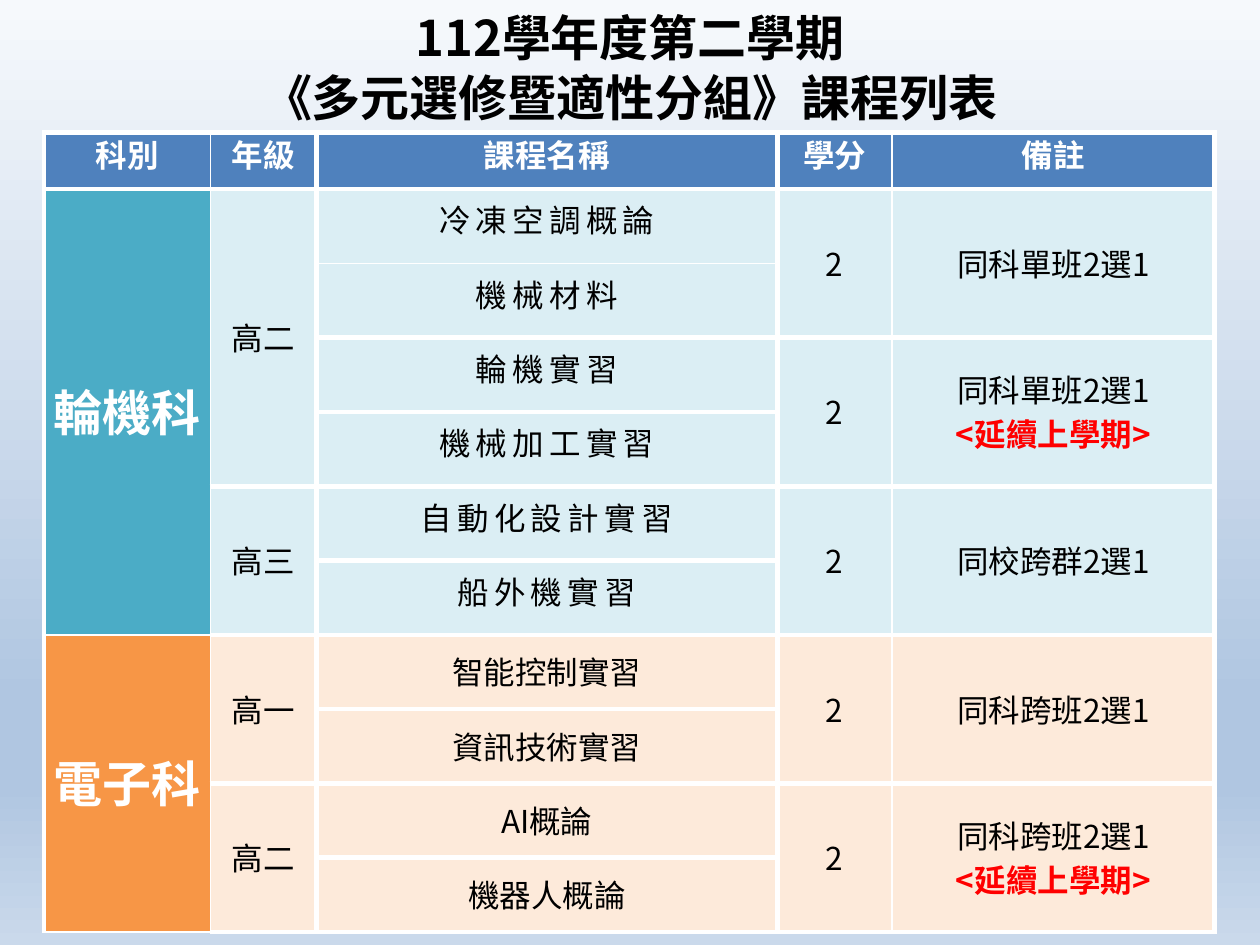
from dataclasses import dataclass
from typing import Optional

from lxml.etree import SubElement
from pptx import Presentation
from pptx.dml.color import RGBColor
from pptx.enum.text import MSO_ANCHOR, PP_ALIGN
from pptx.oxml.ns import qn
from pptx.util import Inches, Pt


@dataclass(frozen=True)
class Theme:
    font: str = "Noto Sans CJK SC"
    white: str = "FFFFFF"
    black: str = "000000"
    red: str = "FF0000"
    header: str = "4F81BD"
    big: int = 28
    body: int = 18
    thin: int = 1
    thick: int = 3
    sky: tuple = ((0, "F6F9FC"), (74, "B0C6E1"), (83, "B0C6E1"), (100, "CAD9EB"))


@dataclass(frozen=True)
class Style:
    size: int
    color: str
    leading: int
    bold: Optional[bool] = None
    spacing: int = 0


@dataclass(frozen=True)
class Group:
    courses: tuple
    remark: str
    credit: str = "2"
    continued: str = ""


@dataclass(frozen=True)
class Grade:
    name: str
    groups: tuple


@dataclass(frozen=True)
class Department:
    name: str
    color: str
    tint: str
    grades: tuple
    leading: int
    spacing: int


@dataclass(frozen=True)
class Edges:
    left: int
    right: int
    top: int
    bottom: int


T = Theme()
TITLE = Style(T.big, T.black, 34, True)
HEADER = Style(T.body, T.white, 18, True)
DEPARTMENT = Style(T.big, T.white, 38, True)
BODY = Style(T.body, T.black, 25)
REMARK = Style(T.body, T.black, 25, False)
CONTINUED = "<延續上學期>"
HEADINGS = ("科別", "年級", "課程名稱", "學分", "備註")
COLUMNS = (1.32, 0.84, 3.66, 0.91, 2.56)
HEADER_HEIGHT, ROW_HEIGHT = 0.45, 0.59
RULES = (T.thick, T.thin, T.thick, T.thick, T.thin, T.thick)
DEPARTMENTS = (
    Department("輪機科", "4BACC6", "DBEEF4", (
        Grade("高二", (
            Group(("冷凍空調概論", "機械材料"), "同科單班2選1"),
            Group(("輪機實習", "機械加工實習"), "同科單班2選1", continued=CONTINUED))),
        Grade("高三", (
            Group(("自動化設計實習", "船外機實習"), "同校跨群2選1"),)),
    ), 18, 3),
    Department("電子科", "F79646", "FDEADA", (
        Grade("高一", (
            Group(("智能控制實習", "資訊技術實習"), "同科跨班2選1"),)),
        Grade("高二", (
            Group(("AI概論", "機器人概論"), "同科跨班2選1", continued=CONTINUED),)),
    ), 25, 0),
)


def count_rows(grades: tuple) -> int:
    return sum(len(group.courses) for grade in grades for group in grade.groups)


def write(p, text: str, style: Style) -> None:
    p.text = text
    p.alignment = PP_ALIGN.CENTER
    p.line_spacing = Pt(style.leading)
    p.font.size = Pt(style.size)
    p.font.bold = style.bold
    p.font.color.rgb = RGBColor.from_string(style.color)
    p.font.name = T.font
    props = p._p.get_or_add_pPr().find(qn("a:defRPr"))
    SubElement(props, qn("a:ea"), typeface=T.font)
    if style.spacing:
        props.set("spc", str(style.spacing * 100))


def set_edges(cell, edges: Edges) -> None:
    tc_pr = cell._tc.get_or_add_tcPr()
    sides = (("a:lnL", edges.left), ("a:lnR", edges.right),
             ("a:lnT", edges.top), ("a:lnB", edges.bottom))
    for i, (tag, width) in enumerate(sides):
        ln = tc_pr.makeelement(qn(tag), {"w": str(Pt(width))})
        fill = SubElement(ln, qn("a:solidFill"))
        SubElement(fill, qn("a:srgbClr"), val=T.white)
        tc_pr.insert(i, ln)


def fill_cell(table, row: int, col: int, text: str, style: Style, color: str,
              span: int = 1, top: int = T.thick, bottom: int = T.thick):
    """Fill a cell, merged over span rows, and return its paragraph."""
    cell = table.cell(row, col)
    if span > 1:
        cell.merge(table.cell(row + span - 1, col))
    for r in range(row, row + span):
        part = table.cell(r, col)
        part.fill.solid()
        part.fill.fore_color.rgb = RGBColor.from_string(color)
        set_edges(part, Edges(RULES[col], RULES[col + 1], top, bottom))
    cell.vertical_anchor = MSO_ANCHOR.MIDDLE
    cell.margin_left = cell.margin_right = cell.margin_top = cell.margin_bottom = 0
    p = cell.text_frame.paragraphs[0]
    write(p, text, style)
    return p


def draw_group(table, row: int, group: Group, dept: Department) -> None:
    span = len(group.courses)
    style = Style(T.body, T.black, dept.leading, spacing=dept.spacing)
    for i, course in enumerate(group.courses):
        top = T.thin if row + i == 2 else T.thick
        bottom = T.thin if row + i == 1 else T.thick
        fill_cell(table, row + i, 2, course, style, dept.tint, 1, top, bottom)
    fill_cell(table, row, 3, group.credit, BODY, dept.tint, span)
    p = fill_cell(table, row, 4, group.remark, REMARK, dept.tint, span)
    if group.continued:
        p.add_line_break()
        r = p.add_run()
        r.text = group.continued
        r.font.bold = True
        r.font.color.rgb = RGBColor.from_string(T.red)


def draw_table(s) -> None:
    rows = 1 + sum(count_rows(dept.grades) for dept in DEPARTMENTS)
    height = HEADER_HEIGHT + ROW_HEIGHT * (rows - 1)
    table = s.shapes.add_table(rows, len(COLUMNS), Inches(0.35), Inches(1.05),
                               Inches(sum(COLUMNS)), Inches(height)).table
    table.horz_banding = False
    table.first_col = True
    for column, width in zip(table.columns, COLUMNS):
        column.width = Inches(width)
    for i, line in enumerate(table.rows):
        line.height = Inches(ROW_HEIGHT if i else HEADER_HEIGHT)
    for col, heading in enumerate(HEADINGS):
        fill_cell(table, 0, col, heading, HEADER, T.header)
    row = 1
    for dept in DEPARTMENTS:
        top = T.thick if row == 1 else T.thin
        fill_cell(table, row, 0, dept.name, DEPARTMENT, dept.color,
                  count_rows(dept.grades), top, T.thin)
        for grade in dept.grades:
            fill_cell(table, row, 1, grade.name, BODY, dept.tint, count_rows((grade,)))
            for group in grade.groups:
                draw_group(table, row, group, dept)
                row += len(group.courses)


def draw_background(s) -> None:
    fill = s.background.fill
    fill.gradient()
    fill.gradient_angle = 270
    stops = s.element.find(".//" + qn("a:gsLst"))
    for stop in list(stops):
        stops.remove(stop)
    for share, color in T.sky:
        stop = SubElement(stops, qn("a:gs"), pos=str(share * 1000))
        SubElement(stop, qn("a:srgbClr"), val=color)


def draw_title(s) -> None:
    tf = s.shapes.add_textbox(Inches(0.59), Inches(0.02), Inches(8.82), Inches(1.02)).text_frame
    tf.word_wrap = True
    tf.vertical_anchor = MSO_ANCHOR.MIDDLE
    write(tf.paragraphs[0], "112學年度第二學期\n《多元選修暨適性分組》課程列表", TITLE)


def main() -> None:
    prs = Presentation()
    prs.slide_width, prs.slide_height = Inches(10), Inches(7.5)
    s = prs.slides.add_slide(prs.slide_layouts[6])
    draw_background(s)
    draw_title(s)
    draw_table(s)
    prs.save("out.pptx")


if __name__ == "__main__":
    main()
